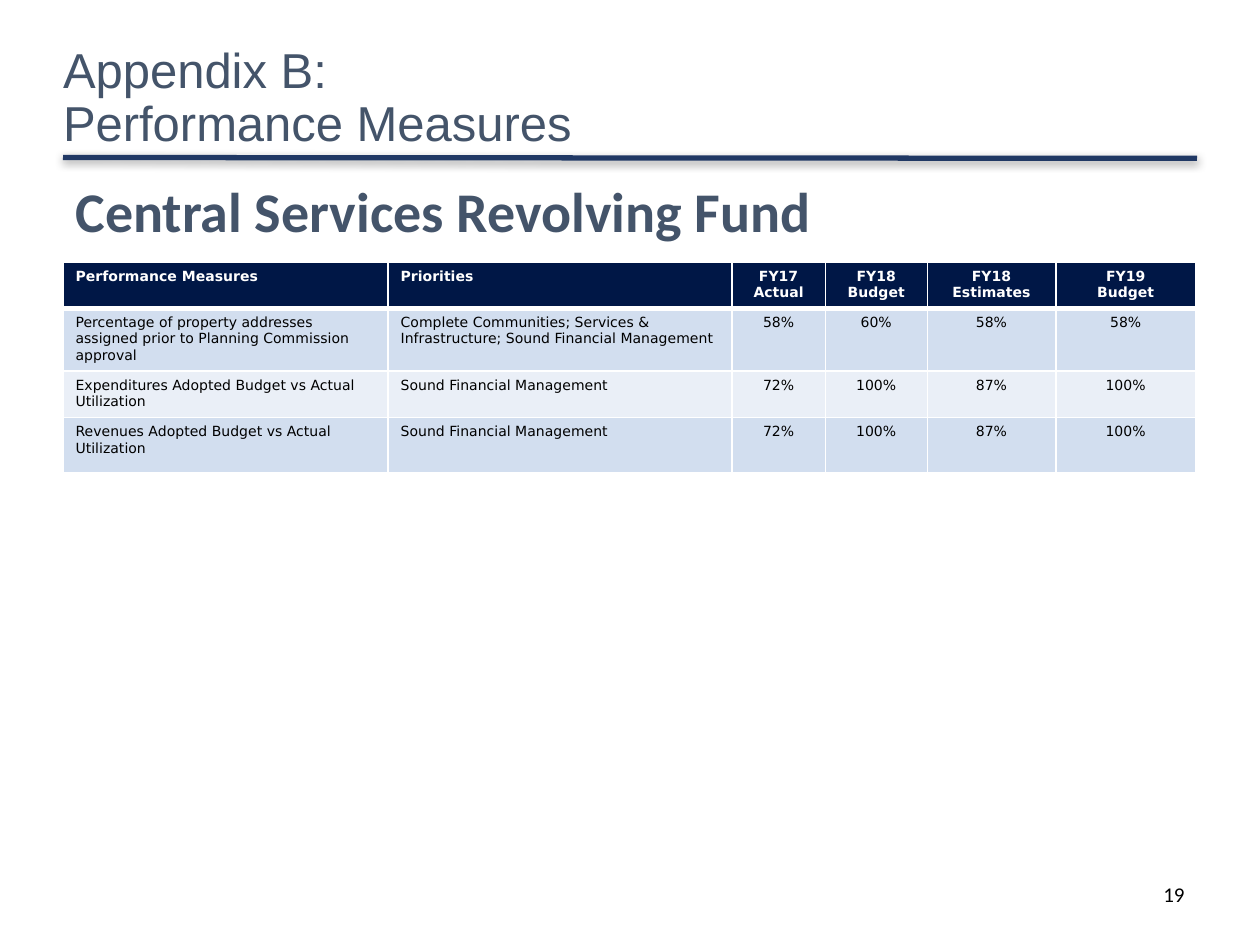
from lxml.etree import SubElement
from pptx import Presentation
from pptx.dml.color import RGBColor
from pptx.enum.shapes import MSO_CONNECTOR
from pptx.enum.text import MSO_ANCHOR, PP_ALIGN
from pptx.oxml.ns import qn
from pptx.util import Pt

NAVY, SLATE, WHITE, BLACK = "001746", "44546A", "FFFFFF", "000000"
BANDS = ["D2DEEF", "EAEFF7"]
WIDTHS = [185.76, 196.56, 53.28, 58.32, 73.44, 79.92]
HEIGHTS = [25.92, 25.92, 25.92, 31.68]
ROWS = [
    ["Performance Measures", "Priorities", "FY17\nActual", "FY18\nBudget",
     "FY18\nEstimates", "FY19\nBudget"],
    ["Percentage of property addresses assigned prior to Planning Commission approval",
     "Complete Communities; Services & Infrastructure; Sound Financial Management",
     "58%", "60%", "58%", "58%"],
    ["Expenditures Adopted Budget vs Actual Utilization",
     "Sound Financial Management", "72%", "100%", "87%", "100%"],
    ["Revenues Adopted Budget vs Actual Utilization",
     "Sound Financial Management", "72%", "100%", "87%", "100%"],
]


def color(code):
    return RGBColor.from_string(code)


def add_run(para, text, size, face, code, bold=False):
    run = para.add_run()
    run.text = text
    font = run.font
    font.size, font.name, font.bold = Pt(size), face, bold
    font.color.rgb = color(code)


def add_box(slide, box, wrap=True):
    frame = slide.shapes.add_textbox(*map(Pt, box)).text_frame
    frame.word_wrap = wrap
    return frame


def add_title(slide, box):
    frame = add_box(slide, box)
    frame.vertical_anchor = MSO_ANCHOR.MIDDLE
    frame.margin_left = frame.margin_right = 0
    frame.margin_top = frame.margin_bottom = 0
    para = frame.paragraphs[0]
    para.line_spacing = 0.9
    add_run(para, "Appendix B:", 28, "Arial", SLATE)
    para.add_line_break()
    add_run(para, "Performance Measures", 28, "Arial", SLATE)


def add_rule(slide, left, top, width, drop):
    rule = slide.shapes.add_connector(
        MSO_CONNECTOR.STRAIGHT, Pt(left), Pt(top), Pt(left + width), Pt(top + drop))
    rule.line.color.rgb = color("203864")
    rule.line.width = Pt(3)
    # Soft shadow straight below the rule
    effects = SubElement(rule._element.spPr, qn("a:effectLst"))
    shadow = SubElement(effects, qn("a:outerShdw"), blurRad=str(Pt(5)),
                        dist=str(Pt(1.6)), dir="5400000", algn="t", rotWithShape="0")
    tint = SubElement(shadow, qn("a:srgbClr"), val=BLACK)
    SubElement(tint, qn("a:alpha"), val="38000")


def add_border(cell, side, width):
    line = SubElement(cell._tc.get_or_add_tcPr(), qn("a:" + side), w=str(Pt(width)))
    fill = SubElement(line, qn("a:solidFill"))
    SubElement(fill, qn("a:srgbClr"), val=WHITE)


def fill_cell(cell, text, row, col):
    head = row == 0
    # Heavy line between the header and the body
    heavy = {0: "lnB", 1: "lnT"}.get(row)
    for side in ("lnL", "lnR", "lnT", "lnB"):
        add_border(cell, side, 3 if side == heavy else 1)
    cell.fill.solid()
    cell.fill.fore_color.rgb = color(NAVY if head else BANDS[(row - 1) % 2])
    frame = cell.text_frame
    for i, part in enumerate(text.split("\n")):
        para = frame.add_paragraph() if i else frame.paragraphs[0]
        para.alignment = PP_ALIGN.CENTER if col > 1 else PP_ALIGN.LEFT
        add_run(para, part, 8, "DejaVu Sans", WHITE if head else BLACK, head)


def add_measures(slide, left, top):
    table = slide.shapes.add_table(
        len(ROWS), len(WIDTHS), Pt(left), Pt(top),
        Pt(sum(WIDTHS)), Pt(sum(HEIGHTS))).table
    for col, width in zip(table.columns, WIDTHS):
        col.width = Pt(width)
    for r, (texts, height) in enumerate(zip(ROWS, HEIGHTS)):
        table.rows[r].height = Pt(height)
        for c, text in enumerate(texts):
            fill_cell(table.cell(r, c), text, r, c)


def add_heading(slide, box):
    para = add_box(slide, box, wrap=False).paragraphs[0]
    add_run(para, "Central Services Revolving Fund", 32, "Calibri", SLATE, True)


def add_number(slide, box):
    para = add_box(slide, box).paragraphs[0]
    para.alignment = PP_ALIGN.RIGHT
    add_run(para, "19", 12, "Calibri", BLACK)


def main():
    deck = Presentation()
    deck.slide_width, deck.slide_height = Pt(720), Pt(540)
    slide = deck.slides.add_slide(deck.slide_layouts[6])
    left = 36
    add_rule(slide, left, 90, 648, 0.5)
    add_title(slide, (left, 23.76, 494, 66.24))
    add_number(slide, (516.24, 500.4, 167.76, 28.8))
    add_measures(slide, left, 149.76)
    add_heading(slide, (left, 97.2, 438.5, 46))
    deck.save("out.pptx")


if __name__ == "__main__":
    main()
